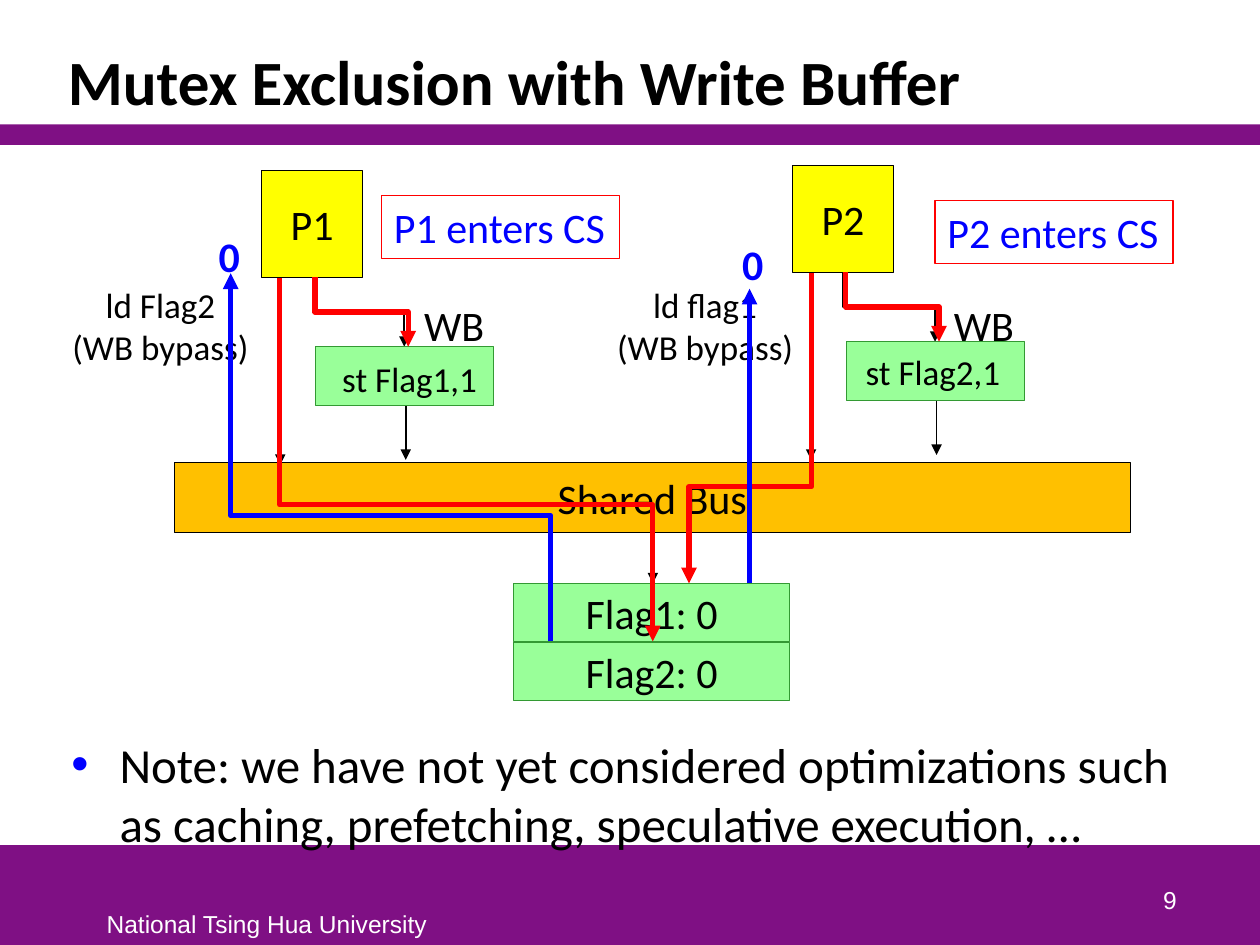
from dataclasses import dataclass

from lxml import etree
from pptx import Presentation
from pptx import util as u
from pptx.dml.color import RGBColor
from pptx.enum import shapes, text
from pptx.oxml.ns import qn


@dataclass(frozen=True)
class Theme:
    """Colours, fonts and type sizes of the slide."""
    purple: str = "7F1084"
    white: str = "FFFFFF"
    black: str = "000000"
    yellow: str = "FFFF00"
    orange: str = "FFC000"
    green: str = "99FF99"
    dark_green: str = "339933"
    red: str = "FF0000"
    blue: str = "0000FF"
    font: str = "Calibri"
    footer_font: str = "Arial"
    title: int = 36
    body: int = 28
    label: int = 24
    small: int = 20
    footer: int = 14


@dataclass(frozen=True)
class Processor:
    """One processor's wording, and the offsets that differ between the two."""
    name: str
    load: str
    store: str
    load_at: tuple
    value_at: tuple
    buffer_at: tuple
    store_at: tuple
    enters_at: tuple


THEME = Theme()
CENTER, RIGHT = text.PP_ALIGN.CENTER, text.PP_ALIGN.RIGHT
MIDDLE, BOTTOM = text.MSO_ANCHOR.MIDDLE, text.MSO_ANCHOR.BOTTOM
PROCESSORS = (
    ((1.77, 0.1), Processor("P1", "ld Flag2", "st Flag1,1", (-4.09, 2.16), (-1.12, 1.09),
                            (3.02, 2.49), (1.37, 3.66), (2.41, 0.51))),
    ((12.47, 0), Processor("P2", "ld flag1", "st Flag2,1", (-3.81, 2.26), (-1.27, 1.35),
                           (3, 2.59), (1.22, 3.61), (2.87, 0.71))),
)


def shift(origin, offset):
    """Return the point at an offset from an origin."""
    return origin[0] + offset[0], origin[1] + offset[1]


def write(shape, lines, size, color=THEME.black, font=THEME.font, bold=False,
          align=None, anchor=None, wrap=False):
    """Write lines of text into a shape and return its text frame."""
    frame = shape.text_frame
    frame.word_wrap = wrap
    if anchor is not None:
        frame.vertical_anchor = anchor
    for index, line in enumerate(lines):
        para = frame.add_paragraph() if index else frame.paragraphs[0]
        para.alignment = align
        span = para.add_run()
        span.text = line
        span.font.name, span.font.size, span.font.bold = font, u.Pt(size), bold
        span.font.color.rgb = RGBColor.from_string(color)
    return frame


def add_label(page, at, size, lines, points, **style):
    """Add a text box with the given lines."""
    box = page.shapes.add_textbox(*map(u.Cm, (*at, *size)))
    return write(box, lines, points, **style)


def add_block(page, at, size, fill=None, line=None, width=0.5):
    """Add a flat rectangle."""
    block = page.shapes.add_shape(shapes.MSO_SHAPE.RECTANGLE, *map(u.Cm, (*at, *size)))
    block.shadow.inherit = False
    if fill:
        block.fill.solid()
        block.fill.fore_color.rgb = RGBColor.from_string(fill)
    else:
        block.fill.background()
    if line:
        block.line.color.rgb = RGBColor.from_string(line)
        block.line.width = u.Pt(width)
    else:
        block.line.fill.background()
    return block


def finish_arrow(connector, color, width):
    """Give a connector its line, its head and no shadow."""
    connector.line.color.rgb = RGBColor.from_string(color)
    connector.line.width = u.Pt(width)
    properties = connector._element.spPr
    etree.SubElement(properties.find(qn("a:ln")), qn("a:tailEnd"), type="triangle")
    etree.SubElement(properties, qn("a:effectLst"))


def add_arrow(page, start, end, color=THEME.black, width=1):
    """Add a straight arrow."""
    connector = page.shapes.add_connector(
        shapes.MSO_CONNECTOR.STRAIGHT, *map(u.Cm, (*start, *end)))
    finish_arrow(connector, color, width)


def add_elbow(page, start, end, color=THEME.black, width=1, bend=0.5):
    """Add an arrow that leaves and arrives vertically, turned at a share of its height."""
    run, drop = end[0] - start[0], end[1] - start[1]
    middle_x, middle_y = start[0] + run / 2, start[1] + drop / 2
    half_width, half_height = abs(drop) / 2, abs(run) / 2
    if (run > 0) == (drop > 0):
        half_height = -half_height
    connector = page.shapes.add_connector(
        shapes.MSO_CONNECTOR.ELBOW,
        u.Cm(middle_x - half_width), u.Cm(middle_y - half_height),
        u.Cm(middle_x + half_width), u.Cm(middle_y + half_height))
    properties = connector._element.spPr
    properties.find(qn("a:xfrm")).set("rot", str((90 if drop > 0 else 270) * 60000))
    geometry = properties.find(qn("a:prstGeom"))
    guides = geometry.find(qn("a:avLst"))
    if guides is None:
        guides = etree.SubElement(geometry, qn("a:avLst"))
    etree.SubElement(guides, qn("a:gd"), name="adj1", fmla=f"val {round(bend * 100000)}")
    finish_arrow(connector, color, width)


def draw_header(page, box):
    """Draw the title and the band below it."""
    add_block(page, shift(box, (0, 2.51)), (25.4, 0.41), THEME.purple)
    frame = add_label(page, shift(box, (1.12, 0.64)), (22.78, 1.88),
                      ["Mutex Exclusion with Write Buffer"], THEME.title,
                      bold=True, anchor=BOTTOM, wrap=True)
    frame.paragraphs[0].line_spacing = 0.85


def draw_footer(page, box):
    """Draw the bottom band with the university and the page number."""
    style = dict(color=THEME.white, font=THEME.footer_font)
    add_block(page, box, (25.4, 2.01), THEME.purple)
    add_label(page, shift(box, (1.9, 1.17)), (7.01, 0.84),
              ["National Tsing Hua University"], THEME.footer, **style)
    add_label(page, shift(box, (18.69, 0.25)), (5.28, 1.27), ["9"], THEME.footer,
              align=RIGHT, anchor=BOTTOM, wrap=True, **style)


def draw_note(page, box):
    """Draw the bulleted note."""
    note = page.shapes.add_textbox(*map(u.Cm, (*box, 22.71, 2.6)))
    properties = note.text_frame.paragraphs[0]._p.get_or_add_pPr()
    indent = u.Cm(0.97)
    properties.set("marL", str(indent))
    properties.set("indent", str(-indent))
    color = etree.SubElement(properties, qn("a:buClr"))
    etree.SubElement(color, qn("a:srgbClr"), val=THEME.blue)
    etree.SubElement(properties, qn("a:buFont"), typeface="Arial")
    etree.SubElement(properties, qn("a:buChar"), char="•")
    write(note, ["Note: we have not yet considered optimizations such as caching, "
                 "prefetching, speculative execution, …"], THEME.body, wrap=True)


def draw_memory(page, box):
    """Draw the shared bus and the two flags it leads to."""
    bus = add_block(page, shift(box, (0, 5.99)), (19.28, 1.42), THEME.orange, THEME.black)
    write(bus, ["Shared Bus"], THEME.label, align=CENTER, anchor=MIDDLE)
    for row, flag in enumerate(("Flag1: 0", "Flag2: 0")):
        cell = add_block(page, shift(box, (6.85, 8.43 + row * 1.19)), (5.56, 1.17),
                         THEME.green, THEME.dark_green)
        write(cell, [flag], THEME.label, align=CENTER, anchor=MIDDLE)
    add_arrow(page, shift(box, (9.65, 7.41)), shift(box, (9.65, 8.43)))


def draw_processor(page, box, processor):
    """Draw a processor with its write buffer and labels."""
    core = add_block(page, box, (2.03, 2.16), THEME.yellow, THEME.black)
    write(core, [processor.name], THEME.label, align=CENTER, anchor=MIDDLE)
    add_arrow(page, shift(box, (0.37, 2.18)), shift(box, (0.37, 5.94)))
    add_elbow(page, shift(box, (1.02, 2.16)), shift(box, (2.87, 3.56)))
    add_arrow(page, shift(box, (2.9, 4.42)), shift(box, (2.9, 5.84)))
    add_label(page, shift(box, processor.load_at), (4.09, 1.96),
              [processor.load, "(WB bypass)"], THEME.small, align=CENTER)
    add_block(page, shift(box, (1.09, 3.56)), (3.58, 1.19), THEME.green, THEME.dark_green)
    add_label(page, shift(box, processor.buffer_at), (1.73, 1.27), ["WB"], THEME.label)
    add_label(page, shift(box, processor.store_at), (3.25, 1.12),
              [processor.store], THEME.small)
    add_elbow(page, shift(box, (1.07, 2.16)), shift(box, (2.95, 3.56)), THEME.red, 3)
    add_label(page, shift(box, processor.value_at), (0.94, 1.27), ["0"], THEME.label,
              color=THEME.blue, bold=True)
    enters = add_block(page, shift(box, processor.enters_at), (4.8, 1.27),
                       line=THEME.red, width=0.75)
    write(enters, [f"{processor.name} enters CS"], THEME.label, THEME.blue, anchor=MIDDLE)


def draw_traffic(page, box):
    """Draw the store paths in red and the load paths in blue."""
    for start, end, color, bend in (
            ((2.13, 2.28), (9.65, 9.6), THEME.red, 0.624),
            ((7.59, 9.6), (1.14, 2.18), THEME.blue, 0.342),
            ((12.85, 2.18), (10.38, 8.43), THEME.red, 0.688)):
        add_elbow(page, shift(box, start), shift(box, end), color, 3, bend)
    add_arrow(page, shift(box, (11.6, 8.43)), shift(box, (11.6, 2.49)), THEME.blue, 3)


def main():
    """Build the slide and save it."""
    deck = Presentation()
    deck.slide_width, deck.slide_height = u.Cm(25.4), u.Cm(19.05)
    page = deck.slides.add_slide(deck.slide_layouts[6])
    draw_footer(page, (0, 17.04))
    draw_header(page, (0, 0))
    draw_note(page, (1.19, 14.68))
    diagram = (3.51, 3.33)
    draw_memory(page, diagram)
    for offset, processor in PROCESSORS:
        draw_processor(page, shift(diagram, offset), processor)
    draw_traffic(page, diagram)
    deck.save("out.pptx")


if __name__ == "__main__":
    main()
